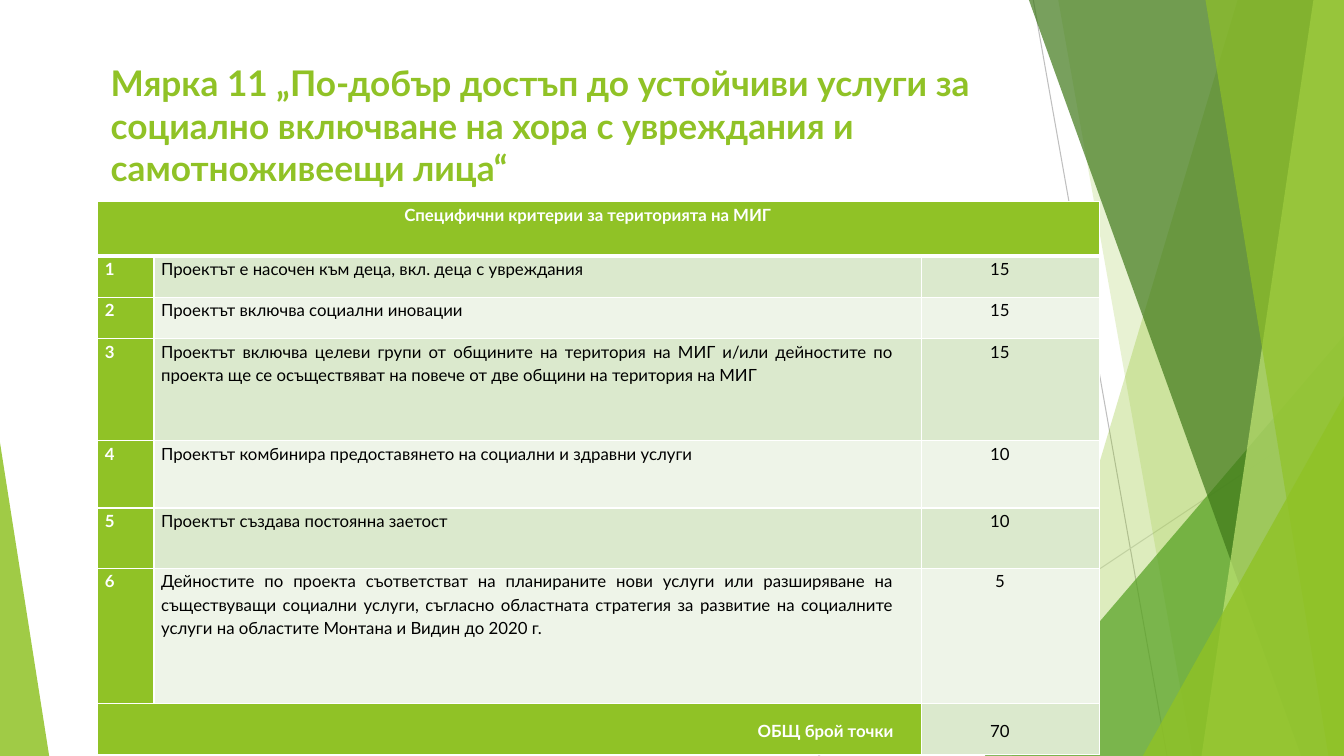
from typing import NamedTuple

from lxml.etree import SubElement as Sub
from pptx import Presentation
from pptx.dml.color import RGBColor
from pptx.enum.shapes import MSO_CONNECTOR, MSO_SHAPE
from pptx.enum.text import MSO_ANCHOR as Anchor, PP_ALIGN as Align
from pptx.oxml.ns import qn
from pptx.util import Cm, Pt

WIDE, HIGH = 33.87, 19.05
LIME, WHITE, BLACK = "90C226", "FFFFFF", "000000"
BANDS = "DBE9CD", "EEF4E8"


class Line(NamedTuple):
    x1: float
    y1: float
    x2: float
    y2: float
    hue: str


class Blade(NamedTuple):
    """A facet reaching the right edge, with a slanted left side."""
    top: float
    foot: float
    hue: str
    alpha: int


class Wedge(NamedTuple):
    """A right triangle standing on the bottom edge."""
    left: float
    top: float
    width: float
    apex: int
    hue: str
    alpha: int


class Item(NamedTuple):
    text: str
    score: int
    height: float


LINES = [
    Line(26.04, 0, 29.41, HIGH, "BFBFBF"),
    Line(WIDE, 10.24, 20.62, HIGH, "D9D9D9"),
]
FACETS = [
    Blade(31.19, 25.5, LIME, 30),
    Blade(26.67, 30.05, LIME, 20),
    Wedge(24.82, 8.46, 9.05, 1, "54A021", 72),
    Blade(25.93, 32.79, "3F7819", 70),
    Blade(33.1, 30.28, "C0E474", 70),
    Blade(30.38, 33.48, LIME, 65),
    Wedge(28.8, 9.98, 5.07, 1, LIME, 80),
    Wedge(0, 11.15, 1.24, 0, LIME, 85),
]
TITLE = ("Мярка 11 „По-добър достъп до устойчиви услуги за социално включване "
         "на хора с увреждания и самотноживеещи лица“")
ITEMS = [
    Item("Проектът е насочен към деца, вкл. деца с увреждания", 15, 1.04),
    Item("Проектът включва социални иновации", 15, 1.04),
    Item("Проектът включва целеви групи от общините на територия на МИГ и/или "
         "дейностите по проекта ще се осъществяват на повече от две общини на "
         "територия на МИГ", 15, 2.57),
    Item("Проектът комбинира предоставянето на социални и здравни услуги", 10, 1.7),
    Item("Проектът създава постоянна заетост", 10, 1.52),
    Item("Дейностите по проекта съответстват на планираните нови услуги или "
         "разширяване на съществуващи социални услуги, съгласно областната "
         "стратегия за развитие на социалните услуги на областите Монтана и "
         "Видин до 2020 г.", 5, 3.4),
]
COLS = 1.42, 19.35, 4.47
HEAD, FOOT = 1.37, 1.3


def paint(color, hue: str) -> None:
    color.rgb = RGBColor.from_string(hue)


def style(target, values: dict) -> None:
    for name, value in values.items():
        setattr(target, name, value)


def write(frame, text: str, hue: str, size: float, bold: bool, align) -> None:
    para = frame.paragraphs[0]
    para.alignment = align
    run = para.add_run()
    run.text = text
    style(run.font, {"name": "Lato", "size": Pt(size), "bold": bold})
    paint(run.font.color, hue)


def draw_line(slide, line: Line) -> None:
    ends = [Cm(v) for v in line[:4]]
    link = slide.shapes.add_connector(MSO_CONNECTOR.STRAIGHT, *ends)
    link.line.width = Pt(0.75)
    paint(link.line.color, line.hue)
    Sub(link._element.spPr, qn("a:effectLst"))


def draw_facet(slide, facet: Blade | Wedge) -> None:
    if isinstance(facet, Blade):
        pen = slide.shapes.build_freeform(Cm(facet.top), 0)
        pen.add_line_segments([(Cm(WIDE), 0), (Cm(WIDE), Cm(HIGH)),
                               (Cm(facet.foot), Cm(HIGH))], close=True)
        shape = pen.convert_to_shape()
    else:
        shape = slide.shapes.add_shape(
            MSO_SHAPE.ISOSCELES_TRIANGLE, Cm(facet.left), Cm(facet.top),
            Cm(facet.width), Cm(HIGH - facet.top))
        shape.adjustments[0] = facet.apex
    shape.shadow.inherit = False
    shape.line.fill.background()
    shape.fill.solid()
    paint(shape.fill.fore_color, facet.hue)
    tint = shape._element.spPr.find(".//" + qn("a:srgbClr"))
    Sub(tint, qn("a:alpha"), val=str(facet.alpha * 1000))


def edge(cell, top: float, foot: float) -> None:
    """Give the cell white borders; widths in points."""
    props = cell._tc.get_or_add_tcPr()
    for side, width in {"L": 1, "R": 1, "T": top, "B": foot}.items():
        rim = Sub(props, qn(f"a:ln{side}"), w=str(Pt(width)))
        Sub(Sub(rim, qn("a:solidFill")), qn("a:srgbClr"), val=WHITE)


def fill_cell(cell, text: str, fill: str, align, gap: float = 0.71,
              anchor=Anchor.TOP) -> None:
    style(cell, {"margin_left": Cm(0.18), "margin_right": Cm(gap),
                 "margin_top": 0, "margin_bottom": 0,
                 "vertical_anchor": anchor})
    cell.fill.solid()
    paint(cell.fill.fore_color, fill)
    dark = fill == LIME
    write(cell.text_frame, text, WHITE if dark else BLACK, 12, dark, align)
    cell.text_frame.paragraphs[0].line_spacing = 1.15


def draw_table(slide) -> None:
    rows = [HEAD, *(item.height for item in ITEMS), FOOT]
    table = slide.shapes.add_table(
        len(rows), len(COLS), Cm(2.46), Cm(5.08),
        Cm(sum(COLS)), Cm(sum(rows))).table
    style(table, {"first_row": False, "horz_banding": False})
    for col, width in zip(table.columns, COLS):
        col.width = Cm(width)
    for i, (row, height) in enumerate(zip(table.rows, rows)):
        row.height = Cm(height)
        for cell in row.cells:
            edge(cell, 3 if i == 1 else 1, 3 if i == 0 else 1)

    last = len(rows) - 1
    table.cell(0, 0).merge(table.cell(0, 2))
    table.cell(last, 0).merge(table.cell(last, 1))
    fill_cell(table.cell(0, 0), "Специфични критерии за територията на МИГ",
              LIME, Align.CENTER)
    for i, item in enumerate(ITEMS, 1):
        band = BANDS[(i - 1) % 2]
        fill_cell(table.cell(i, 0), str(i), LIME, Align.JUSTIFY, 0.18)
        fill_cell(table.cell(i, 1), item.text, band, Align.JUSTIFY)
        fill_cell(table.cell(i, 2), str(item.score), band, Align.CENTER)
    fill_cell(table.cell(last, 0), "ОБЩ брой точки", LIME, Align.RIGHT,
              anchor=Anchor.MIDDLE)
    total = sum(item.score for item in ITEMS)
    fill_cell(table.cell(last, 2), str(total), BANDS[0], Align.CENTER,
              anchor=Anchor.MIDDLE)


def main() -> None:
    deck = Presentation()
    style(deck, {"slide_width": Cm(WIDE), "slide_height": Cm(HIGH)})
    slide = deck.slides.add_slide(deck.slide_layouts[6])
    for line in LINES:
        draw_line(slide, line)
    for facet in FACETS:
        draw_facet(slide, facet)
    frame = slide.shapes.add_textbox(
        Cm(2.54), Cm(1.35), Cm(25.2), Cm(3.6)).text_frame
    style(frame, {"word_wrap": True, "vertical_anchor": Anchor.MIDDLE})
    write(frame, TITLE, LIME, 25.2, True, Align.LEFT)
    draw_table(slide)
    deck.save("out.pptx")


if __name__ == "__main__":
    main()
